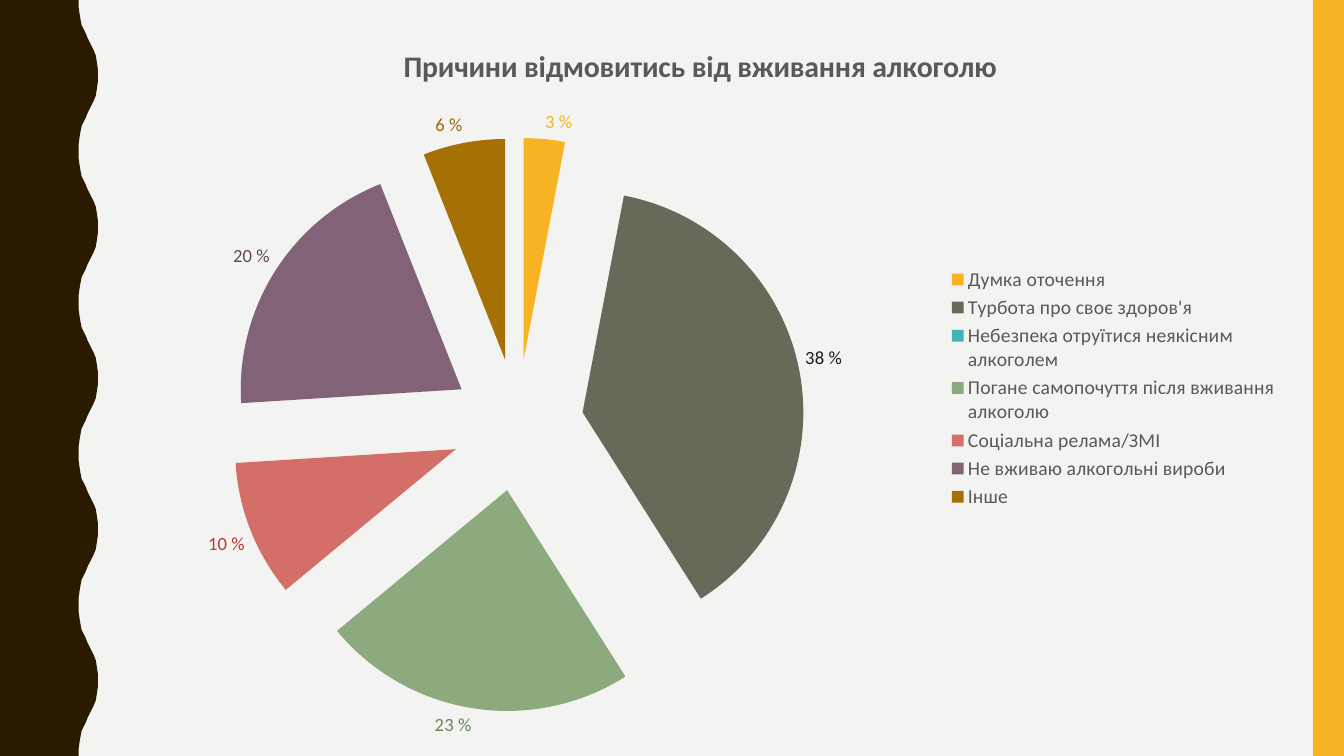
from lxml import etree
from pptx import Presentation
from pptx import util as u
from pptx.chart.data import CategoryChartData
from pptx.dml.color import RGBColor
from pptx.enum import chart as charts, shapes
from pptx.oxml.ns import qn

PX = 9144  # 100 px to the inch
WIDTH, HEIGHT = 1333, 750
COLORS = {"paper": "F3F3F2", "wave": "2A1A00", "stripe": "F8B323", "text": "595959"}
TITLE = "Причини відмовитись від вживання алкоголю"
PERCENT = '0" %";;'  # zero stays unlabelled
REASONS = [  # name, percent, slice colour, label colour
    ("Думка оточення", 3, "F8B323", "F8B323"),
    ("Турбота про своє здоров'я", 38, "656A59", "1A1A1A"),
    ("Небезпека отруїтися неякісним алкоголем", 0, "46B2B5", "46B2B5"),
    ("Погане самопочуття після вживання алкоголю", 23, "8CAA7E", "668855"),
    ("Соціальна релама/ЗМІ", 10, "D36F68", "BB3A32"),
    ("Не вживаю алкогольні вироби", 20, "826276", "624958"),
    ("Інше", 6, "A57105", "9A6A05"),
]


def style_font(font, size, color, bold=False):
    values = {"name": "Calibri", "size": u.Pt(size), "bold": bold}
    for key, value in values.items():
        setattr(font, key, value)
    font.color.rgb = RGBColor.from_string(color)


def paint(shape, color):
    shape.shadow.inherit = False
    shape.fill.solid()
    shape.fill.fore_color.rgb = RGBColor.from_string(color)
    shape.line.fill.background()


deck = Presentation()
deck.slide_width, deck.slide_height = WIDTH * PX, HEIGHT * PX
page = deck.slides.add_slide(deck.slide_layouts[6])
page.background.fill.solid()
page.background.fill.fore_color.rgb = RGBColor.from_string(COLORS["paper"])

# Wavy left edge: each wave is a rise and its mirror image
rise = [(78, 0), (78, 7), (79, 14), (80, 20), (81, 25), (83, 29), (85, 33), (87, 38),
        (89, 42), (91, 46), (93, 50), (95, 55), (96, 61), (97, 68), (97, 75)]
period = 150
wave = rise + [(x, period - y) for x, y in reversed(rise[:-1])]
edge = [(x, y + top) for top in range(0, HEIGHT, period) for x, y in wave]
builder = page.shapes.build_freeform(0, 0, scale=PX)
builder.add_line_segments(edge + [(0, HEIGHT)], close=True)
paint(builder.convert_to_shape(), COLORS["wave"])

# Right stripe
stripe = page.shapes.add_shape(shapes.MSO_SHAPE.RECTANGLE, 1302 * PX, 0, 31 * PX, HEIGHT * PX)
paint(stripe, COLORS["stripe"])

# Pie chart
data = CategoryChartData(number_format=PERCENT)
data.categories = [reason[0] for reason in REASONS]
data.add_series(TITLE, [reason[1] for reason in REASONS])
chart = page.shapes.add_chart(charts.XL_CHART_TYPE.PIE, 110 * PX, 20 * PX,
                              1169 * PX, 730 * PX, data).chart
style_font(chart.font, 10, "000000")
chart.has_title = True
chart.chart_title.include_in_layout = False
title = chart.chart_title.text_frame.paragraphs[0]
span = title.add_run()
span.text = TITLE
style_font(span.font, 21.3, COLORS["text"], True)
chart.has_legend = True
chart.legend.position = charts.XL_LEGEND_POSITION.RIGHT
chart.legend.include_in_layout = False
style_font(chart.legend.font, 14, COLORS["text"])

# Slices and their labels
plot = chart.plots[0]
plot.vary_by_categories = True
series = plot.series[0]
labels = series.data_labels
labels.show_value = True
labels.number_format, labels.number_format_is_linked = PERCENT, False
labels.position = charts.XL_LABEL_POSITION.OUTSIDE_END
for index, (name, percent, fill, ink) in enumerate(REASONS):
    point = series.points[index]
    point.format.fill.solid()
    point.format.fill.fore_color.rgb = RGBColor.from_string(fill)
    style_font(point.data_label.font, 13.3, ink)
    point.data_label.position = charts.XL_LABEL_POSITION.OUTSIDE_END

# Number format of each label, and the gap between slices
for properties in series._element.findall(".//" + qn("c:dLbl") + "/" + qn("c:txPr")):
    number = etree.Element(qn("c:numFmt"), formatCode=PERCENT, sourceLinked="0")
    before = properties.getprevious()
    anchor = before if before.tag == qn("c:spPr") else properties
    anchor.addprevious(number)
explosion = etree.Element(qn("c:explosion"), val="30")
series._element.find(qn("c:dPt")).addprevious(explosion)

# Place of the pie within the chart
area = chart._chartSpace.find(".//" + qn("c:plotArea"))
for old in area.findall(qn("c:layout")):
    area.remove(old)
layout = etree.Element(qn("c:layout"))
manual = etree.SubElement(layout, qn("c:manualLayout"))
for tag, value in {"layoutTarget": "inner", "xMode": "edge", "yMode": "edge",
                   "x": "0.1", "y": "0.16", "w": "0.49", "h": "0.78"}.items():
    etree.SubElement(manual, qn("c:" + tag), val=value)
area.insert(0, layout)

deck.save("out.pptx")
